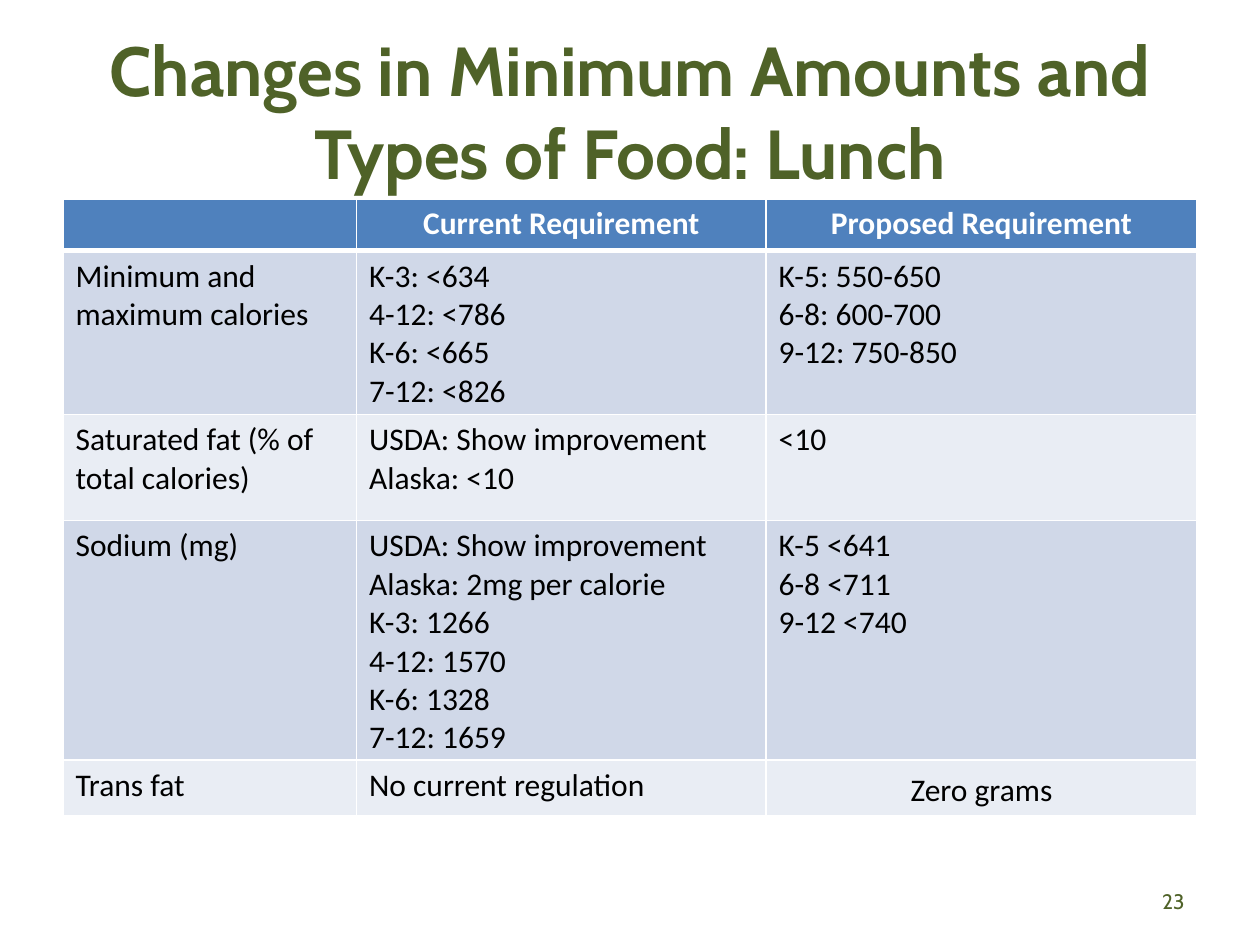
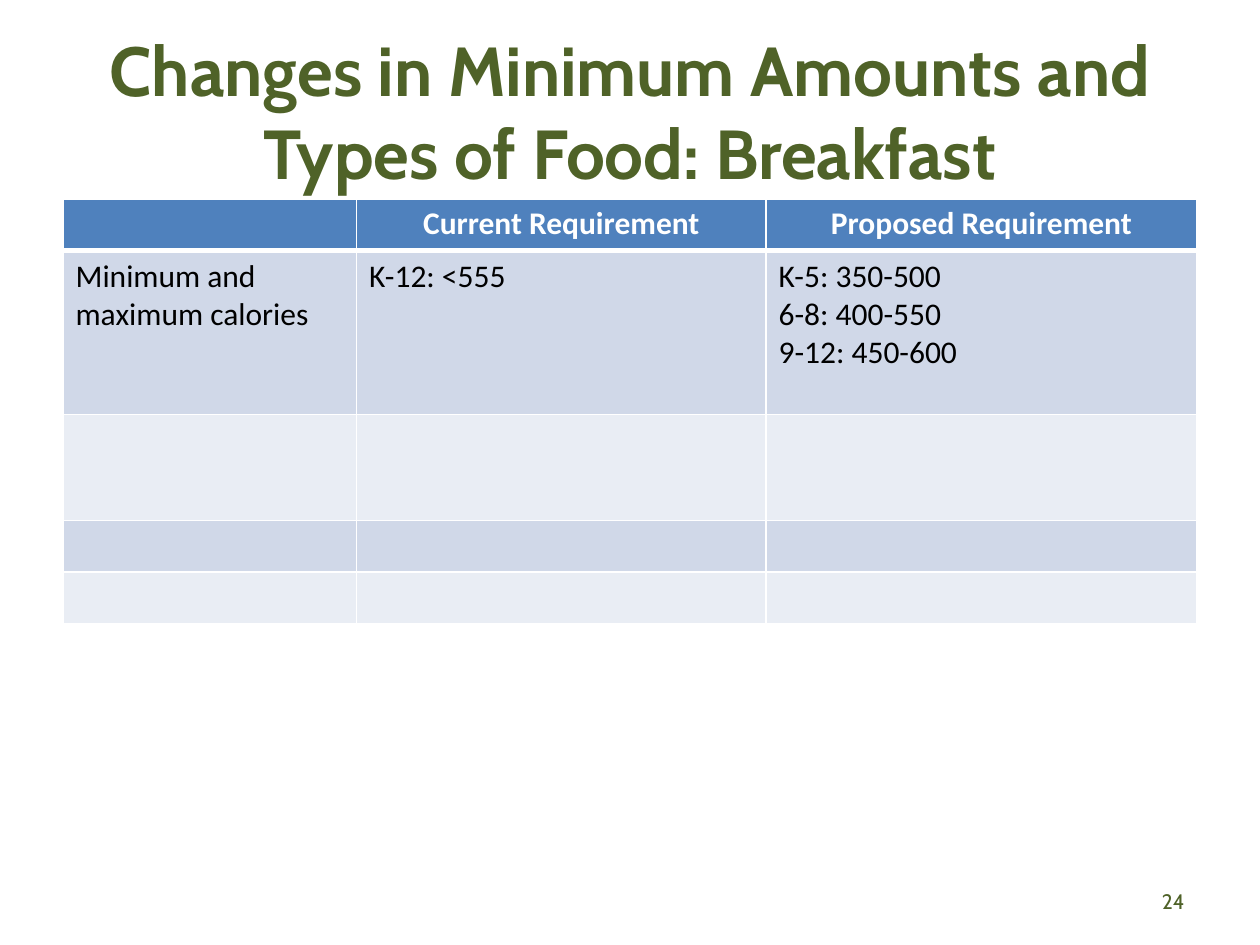
import pptx
import pptx.util
import pptx.dml.color
import pptx.enum.text
import pptx.oxml
import pptx.oxml.ns

TITLE = "Changes in Minimum Amounts and Types of Food: "
HEADER = ["", "Current Requirement", "Proposed Requirement"]
CALORIES = "Minimum and maximum calories"
EMPTY_ROW = ([], [], [])
MEALS = [
    {
        "meal": "Lunch",
        "number": "23",
        "rows": [
            ([CALORIES],
             ["K-3: <634", "4-12: <786", "K-6: <665", "7-12: <826"],
             ["K-5: 550-650", "6-8: 600-700", "9-12: 750-850"]),
            (["Saturated fat (% of total calories)"],
             ["USDA: Show improvement", "Alaska: <10"],
             ["<10"]),
            (["Sodium (mg)"],
             ["USDA: Show improvement", "Alaska: 2mg per calorie", "K-3: 1266",
              "4-12: 1570", "K-6: 1328", "7-12: 1659"],
             ["K-5 <641", "6-8 <711", "9-12 <740"]),
            (["Trans fat"], ["No current regulation"], ["Zero grams"]),
        ],
        "centered": {(4, 2)},
    },
    {
        "meal": "Breakfast",
        "number": "24",
        "rows": [
            ([CALORIES],
             ["K-12: <555"],
             ["K-5: 350-500", "6-8: 400-550", "9-12: 450-600"]),
            EMPTY_ROW,
            EMPTY_ROW,
            EMPTY_ROW,
        ],
        "centered": set(),
    },
]

WIDTH, HEIGHT, MARGIN = 10, 7.5, 0.5
CONTENT_WIDTH = WIDTH - 2 * MARGIN
TABLE_TOP = 1.58
COLUMN_WIDTHS = [2.33, 3.25, 3.42]
ROW_HEIGHTS = [0.41, 1.3, 0.84, 0.41, 0.41]
NUMBER_WIDTH, NUMBER_HEIGHT, NUMBER_TOP = 2.33, 0.4, 6.95

GREEN, BLUE, WHITE, BLACK = "4F6228", "4F81BD", "FFFFFF", "000000"
BANDS = ["E9EDF4", "D0D8E8"]
TITLE_FONT, TABLE_FONT = "Cabin", "Calibri"
ALIGN = pptx.enum.text.PP_ALIGN
MIDDLE = pptx.enum.text.MSO_ANCHOR.MIDDLE
inches = pptx.util.Inches


def color(value):
    return pptx.dml.color.RGBColor.from_string(value)


def write(frame, lines, font, size, value, bold=False, align=ALIGN.LEFT, spacing=None):
    for index, line in enumerate(lines):
        paragraph = frame.add_paragraph() if index else frame.paragraphs[0]
        paragraph.alignment = align
        if spacing:
            paragraph.line_spacing = spacing
        run = paragraph.add_run()
        run.text = line
        run.font.name = font
        run.font.size = pptx.util.Pt(size)
        run.font.bold = bold
        run.font.color.rgb = color(value)


def add_text(slide, box, text, size, align, bold=False):
    shape = slide.shapes.add_textbox(*map(inches, box))
    frame = shape.text_frame
    frame.word_wrap = True
    frame.vertical_anchor = MIDDLE
    write(frame, [text], TITLE_FONT, size, GREEN, bold, align)


def add_borders(cell, row):
    points = {"L": 1, "R": 1, "T": 3 if row == 1 else 1, "B": 3 if row == 0 else 1}
    properties = cell._tc.get_or_add_tcPr()
    for position, (side, width) in enumerate(points.items()):
        border = pptx.oxml.parse_xml(
            f'<a:ln{side} {pptx.oxml.ns.nsdecls("a")} w="{pptx.util.Pt(width)}">'
            f'<a:solidFill><a:srgbClr val="{WHITE}"/></a:solidFill></a:ln{side}>')
        properties.insert(position, border)


def fill_cell(cell, row, lines, centered):
    is_header = row == 0
    cell.fill.solid()
    cell.fill.fore_color.rgb = color(BLUE if is_header else BANDS[row % 2])
    add_borders(cell, row)
    if is_header:
        cell.margin_left = cell.margin_right = inches(0.07)
        cell.margin_top = cell.margin_bottom = 0
    middle = is_header or centered
    write(cell.text_frame, lines, TABLE_FONT, 18, WHITE if is_header else BLACK,
          is_header, ALIGN.CENTER if middle else ALIGN.LEFT, 1.15 if middle else None)


def add_requirements(slide, meal):
    rows = [[[label] if label else [] for label in HEADER]] + meal["rows"]
    frame = slide.shapes.add_table(
        len(rows), len(HEADER), inches(MARGIN), inches(TABLE_TOP),
        inches(CONTENT_WIDTH), inches(sum(ROW_HEIGHTS)))
    table = frame.table
    for column, width in zip(table.columns, COLUMN_WIDTHS):
        column.width = inches(width)
    for row, height in zip(table.rows, ROW_HEIGHTS):
        row.height = inches(height)
    for row, cells in enumerate(rows):
        for column, lines in enumerate(cells):
            fill_cell(table.cell(row, column), row, lines, (row, column) in meal["centered"])


def main():
    presentation = pptx.Presentation()
    presentation.slide_width = inches(WIDTH)
    presentation.slide_height = inches(HEIGHT)
    for meal in MEALS:
        slide = presentation.slides.add_slide(presentation.slide_layouts[6])
        add_text(slide, (MARGIN, 0.25, CONTENT_WIDTH, 1.25),
                 TITLE + meal["meal"], 39.6, ALIGN.CENTER, True)
        add_requirements(slide, meal)
        add_text(slide, (WIDTH - MARGIN - NUMBER_WIDTH, NUMBER_TOP, NUMBER_WIDTH, NUMBER_HEIGHT),
                 meal["number"], 12, ALIGN.RIGHT)
    presentation.save("out.pptx")


if __name__ == "__main__":
    main()
